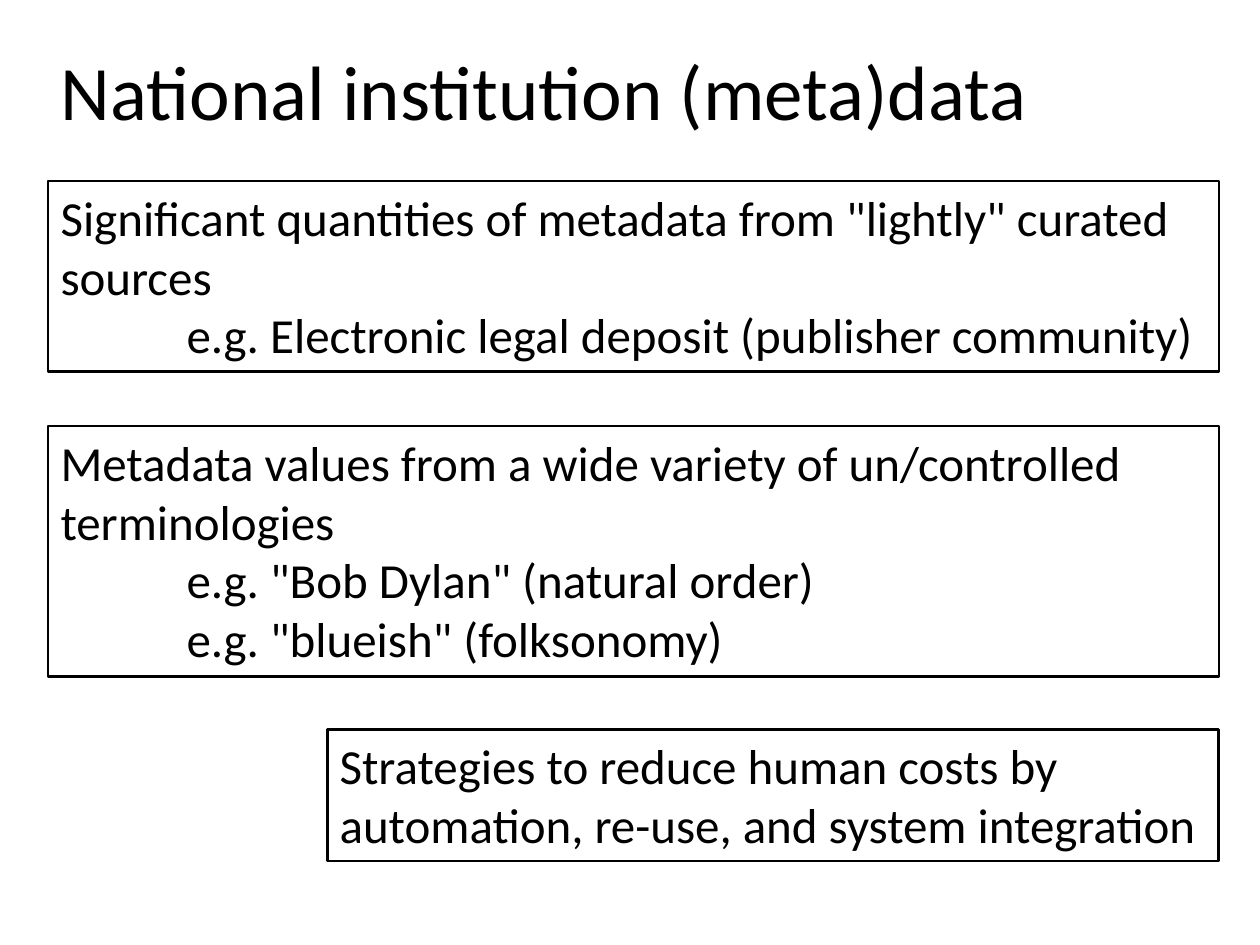
from pptx import Presentation
from pptx import util as u
from pptx.dml import color
from pptx.enum import shapes, text

Pt = u.Pt
INK = "000000"
LEFT, RIGHT = 27.5, 696.5
EXAMPLE_INDENT = 72


def rgb(hex_string):
    return color.RGBColor.from_string(hex_string)


def add_line(paragraph, words, size):
    """Write one left-aligned paragraph as a single run."""
    paragraph.alignment = text.PP_ALIGN.LEFT
    run = paragraph.add_run()
    run.text = words
    run.font.name = "Calibri"
    run.font.size = Pt(size)
    run.font.color.rgb = rgb(INK)


deck = Presentation()
deck.slide_width, deck.slide_height = Pt(720), Pt(540)
slide = deck.slides.add_slide(deck.slide_layouts[5])

heading = slide.shapes.title
heading.left, heading.top = Pt(LEFT), Pt(21)
heading.width, heading.height = Pt(574), Pt(60.5)
heading.text_frame.word_wrap = False
heading.text_frame.auto_size = text.MSO_AUTO_SIZE.NONE
heading.text_frame.vertical_anchor = text.MSO_ANCHOR.TOP
add_line(heading.text_frame.paragraphs[0], "National institution (meta)data", 44)

# left, top, height, statement, examples
statements = [
    (LEFT, 103.5, 109,
     'Significant quantities of metadata from "lightly" curated sources',
     ["e.g. Electronic legal deposit (publisher community)"]),
    (LEFT, 243.5, 143,
     "Metadata values from a wide variety of un/controlled terminologies",
     ['e.g. "Bob Dylan" (natural order)', 'e.g. "blueish" (folksonomy)']),
    (187, 417, 75,
     "Strategies to reduce human costs by automation, re-use, and system integration",
     []),
]

for left, top, height, statement, examples in statements:
    box = slide.shapes.add_shape(shapes.MSO_SHAPE.RECTANGLE, Pt(left), Pt(top),
                                 Pt(RIGHT - left), Pt(height))
    box.shadow.inherit = False
    box.fill.background()
    box.line.color.rgb = rgb(INK)
    box.line.width = Pt(1.5)
    frame = box.text_frame
    frame.word_wrap = True
    frame.vertical_anchor = text.MSO_ANCHOR.TOP
    add_line(frame.paragraphs[0], statement, 28)
    for example in examples:
        paragraph = frame.add_paragraph()
        paragraph._p.get_or_add_pPr().set("marL", str(Pt(EXAMPLE_INDENT)))
        add_line(paragraph, example, 28)

deck.save("out.pptx")
